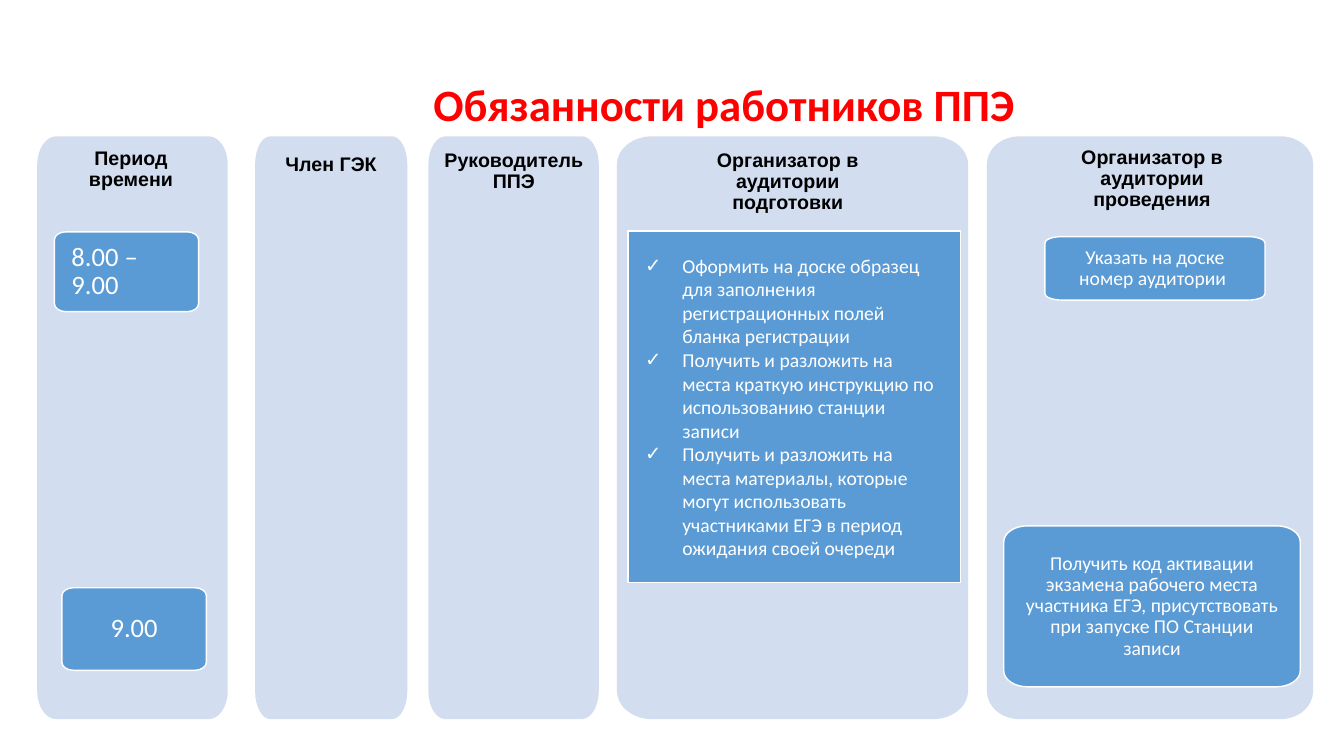
from dataclasses import dataclass

from lxml import etree
from pptx import Presentation
from pptx.dml.color import RGBColor
from pptx.enum import text
from pptx.oxml import ns
from pptx.util import Pt

CURVE = 0.55
CHECKLIST = [
    "Оформить на доске образец для заполнения регистрационных полей бланка регистрации",
    "Получить и разложить на места краткую инструкцию по использованию станции записи",
    "Получить и разложить на места материалы, которые могут использовать "
    "участниками ЕГЭ в период ожидания своей очереди",
]


@dataclass
class Box:
    left: float
    top: float
    width: float
    height: float


@dataclass
class Column:
    left: float
    width: float
    header: str
    header_box: Box
    wrap: bool = True


@dataclass
class Card:
    box: Box
    label: str
    size: float = 14
    align: text.PP_ALIGN = text.PP_ALIGN.CENTER


COLUMNS = [
    Column(26.6, 136.1, "Период времени", Box(33.1, 101.5, 121, 38.9)),
    Column(182.2, 108.7, "Член ГЭК", Box(195.1, 105.8, 82.8, 23.8), False),
    Column(306, 121.7, "Руководитель ППЭ", Box(293.3, 103, 147.5, 38.9)),
    Column(440.7, 250.8, "Организатор в аудитории подготовки", Box(482.4, 103, 160.6, 54.7)),
    Column(704.9, 233.1, "Организатор в аудитории проведения", Box(745.2, 100.8, 155.5, 54.7)),
]
CHECKLIST_BOX = Box(448.6, 164.9, 237.4, 251.3)
CARDS = [
    Card(Box(38.9, 165.6, 103, 57), "8.00 – 9.00", 19, text.PP_ALIGN.LEFT),
    Card(Box(44.2, 419.8, 103.3, 59), "9.00", 19),
    Card(Box(746.4, 169, 157.2, 45.4), "Указать на доске номер аудитории "),
    Card(Box(717, 375.6, 211.8, 115), "Получить код активации экзамена рабочего места участника ЕГЭ, "
         "присутствовать при запуске ПО Станции записи"),
]


def color(value: str) -> RGBColor:
    return RGBColor.from_string(value)


def place(sp, box: Box) -> None:
    sp.left, sp.top = Pt(box.left), Pt(box.top)
    sp.width, sp.height = Pt(box.width), Pt(box.height)


def format_frame(tf, side: float, edge: float, anchor, wrap: bool = True) -> None:
    tf.auto_size = text.MSO_AUTO_SIZE.NONE
    tf.word_wrap = wrap
    tf.vertical_anchor = anchor
    tf.margin_left = tf.margin_right = Pt(side)
    tf.margin_top = tf.margin_bottom = Pt(edge)


def format_paragraph(p, name: str, size: float, hex_color: str, bold: bool = False,
                     align=text.PP_ALIGN.CENTER, spacing: float = 0.9) -> None:
    p.alignment = align
    p.line_spacing = spacing
    p.space_before = p.space_after = Pt(0)
    p.font.name, p.font.size, p.font.bold = name, Pt(size), bold
    p.font.color.rgb = color(hex_color)


def round_corners(sp) -> None:
    points = [(int(pt.get("x")), int(pt.get("y"))) for pt in sp._element.iter(ns.qn("a:pt"))]
    segments = list(sp._element.iter(ns.qn("a:lnTo")))
    for i in range(0, len(points), 2):
        start, end, segment = points[i], points[i + 1], segments[i]
        corner = (start[0], end[1]) if i % 4 == 0 else (end[0], start[1])
        segment.tag = ns.qn("a:cubicBezTo")
        for position, origin in enumerate((start, end)):
            control = etree.Element(ns.qn("a:pt"))
            for axis, a, b in zip("xy", origin, corner):
                control.set(axis, str(round(a + CURVE * (b - a))))
            segment.insert(position, control)


def add_rounded(shapes, box: Box, rx: float, ry: float, fill: str):
    left, top = box.left, box.top
    right, bottom = left + box.width, top + box.height
    outline = [
        (left, top + ry), (left + rx, top), (right - rx, top), (right, top + ry),
        (right, bottom - ry), (right - rx, bottom), (left + rx, bottom), (left, bottom - ry),
    ]
    points = [(Pt(x), Pt(y)) for x, y in outline]
    builder = shapes.build_freeform(*points[0])
    builder.add_line_segments(points[1:], close=True)
    sp = builder.convert_to_shape()
    round_corners(sp)
    sp.shadow.inherit = False
    sp.fill.solid()
    sp.fill.fore_color.rgb = color(fill)
    sp.line.fill.background()
    return sp


def add_column(shapes, column: Column) -> None:
    box = Box(column.left, 97.4, column.width, 416.3)
    add_rounded(shapes, box, 0.1 * box.width, 20, "D2DEEF")
    header = column.header_box
    sp = shapes.add_textbox(Pt(header.left), Pt(header.top), Pt(header.width), Pt(header.height))
    tf = sp.text_frame
    format_frame(tf, 8.5, 4.3, text.MSO_ANCHOR.TOP, column.wrap)
    tf.text = column.header
    format_paragraph(tf.paragraphs[0], "Arial", 14, "000000", True)


def add_panel(shapes, box: Box):
    sp = add_rounded(shapes, box, 0.08 * box.width, 0.1 * box.height, "5B9BD5")
    sp.line.color.rgb = color("FFFFFF")
    sp.line.width = Pt(1)
    return sp


def add_card(shapes, card: Card) -> None:
    tf = add_panel(shapes, card.box).text_frame
    format_frame(tf, 12.2, 10, text.MSO_ANCHOR.MIDDLE)
    tf.text = card.label
    format_paragraph(tf.paragraphs[0], "Calibri", card.size, "FFFFFF", align=card.align)


def add_check_bullet(p) -> None:
    props = p._p.get_or_add_pPr()
    props.set("marL", str(Pt(26.6)))
    props.set("indent", str(-Pt(26.6)))
    etree.SubElement(props, ns.qn("a:buFont")).set("typeface", "Arial")
    etree.SubElement(props, ns.qn("a:buChar")).set("char", "✓")


def fill_checklist(shapes, body) -> None:
    panel = add_panel(shapes, CHECKLIST_BOX)._element
    body._element.replace(body._element.spPr, panel.spPr)
    panel.getparent().replace(panel, body._element)
    tf = body.text_frame
    format_frame(tf, 12.2, 10, text.MSO_ANCHOR.MIDDLE)
    tf.text = "\n".join(CHECKLIST)
    for p in tf.paragraphs:
        add_check_bullet(p)
        format_paragraph(p, "Calibri", 14, "FFFFFF", align=text.PP_ALIGN.LEFT, spacing=1.0)


def main() -> None:
    prs = Presentation()
    prs.slide_width, prs.slide_height = Pt(960), Pt(540)
    s = prs.slides.add_slide(prs.slide_layouts[1])
    title, body = s.shapes.title, s.placeholders[1]
    place(title, Box(112.3, 50.4, 810, 47.5))
    format_frame(title.text_frame, 8.5, 4.3, text.MSO_ANCHOR.TOP)
    title.text_frame.text = "Обязанности работников ППЭ"
    format_paragraph(title.text_frame.paragraphs[0], "Calibri", 32, "FF0000", True, spacing=1.0)
    for column in COLUMNS:
        add_column(s.shapes, column)
    for card in CARDS:
        add_card(s.shapes, card)
    fill_checklist(s.shapes, body)
    prs.save("out.pptx")


if __name__ == "__main__":
    main()
